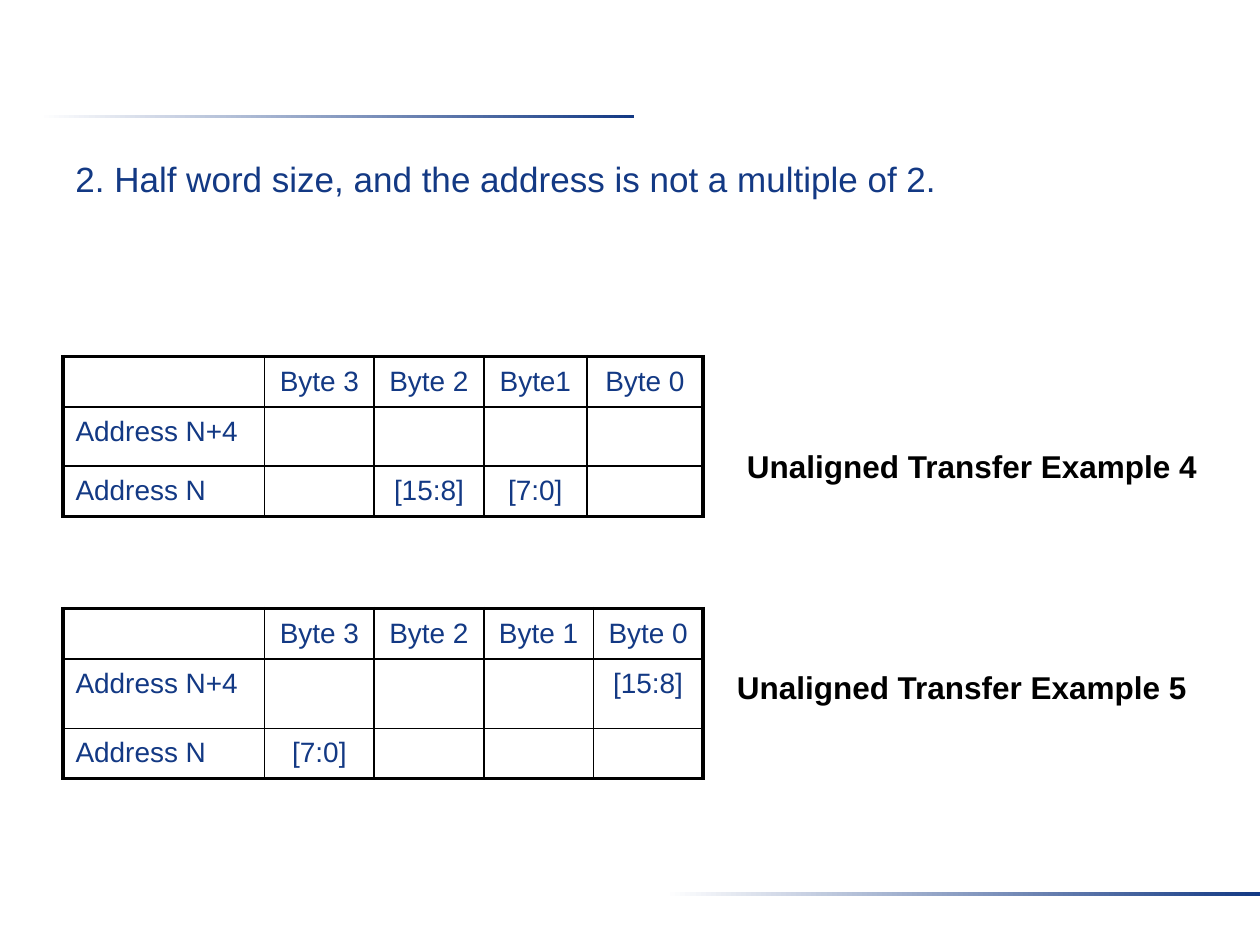
from lxml import etree
from pptx import Presentation
from pptx.dml.color import RGBColor
from pptx.enum.shapes import MSO_SHAPE
from pptx.enum.text import MSO_AUTO_SIZE, PP_ALIGN
from pptx.oxml.ns import qn
from pptx.util import Inches, Pt

RECT = MSO_SHAPE.RECTANGLE
LEFT, CENTER = PP_ALIGN.LEFT, PP_ALIGN.CENTER
FIT = MSO_AUTO_SIZE.SHAPE_TO_FIT_TEXT
NAVY, BLACK, WHITE = "133984", "000000", "FFFFFF"
THIN, THICK = 1, 2.25
WIDE, HIGH = 10, 7.5
EDGE = 0.05 * WIDE
ROW = 0.39

TITLE = "2. Half word size, and the address is not a multiple of 2."
BARS = [(0.31, 0.91), (5.28, 7.08)]
LABELS = [
    ("Unaligned Transfer Example 4", 5.83, 3.5),
    ("Unaligned Transfer Example 5", 5.75, 5.25),
]
TABLES = [
    {
        "top": 2.83,
        "cols": [1.6, 0.87, 0.87, 0.82, 0.92],
        "rows": [ROW, 0.47, ROW],
        "cells": [
            ["", "Byte 3", "Byte 2", "Byte1", "Byte 0"],
            ["Address N+4", "", "", "", ""],
            ["Address N", "", "[15:8]", "[7:0]", ""],
        ],
    },
    {
        "top": 4.83,
        "cols": [1.6] + [0.87] * 4,
        "rows": [ROW, 0.55, ROW],
        "cells": [
            ["", "Byte 3", "Byte 2", "Byte 1", "Byte 0"],
            ["Address N+4", "", "", "", "[15:8]"],
            ["Address N", "[7:0]", "", "", ""],
        ],
    },
]


def paint(color):
    """Turn a hex string into a colour."""
    return RGBColor.from_string(color)


def write(frame, text, size=16, color=NAVY, bold=False, align=LEFT, space=1.1):
    """Put one formatted paragraph in a text frame."""
    para = frame.paragraphs[0]
    para.alignment, para.line_spacing = align, space
    run = para.add_run()
    run.text = text
    font = run.font
    font.name, font.size, font.bold = "Arial", Pt(size), bold
    font.color.rgb = paint(color)


def draw_bar(slide, left, top):
    """Draw a rule that fades in from the left."""
    bar = slide.shapes.add_shape(
        RECT, Inches(left), Inches(top), Inches(4.72), Inches(0.03))
    bar.shadow.inherit = False
    bar.line.fill.background()
    bar.fill.gradient()
    bar.fill.gradient_angle = 0
    for stop, color in zip(bar.fill.gradient_stops, (WHITE, NAVY)):
        stop.color.rgb = paint(color)


def add_box(slide, left, top, width, height):
    """Add a text box and return its frame."""
    box = slide.shapes.add_textbox(
        Inches(left), Inches(top), Inches(width), Inches(height))
    return box.text_frame


def set_edges(cell, outer):
    """Line each side of a cell, thick where it is on the outside."""
    props = cell._tc.get_or_add_tcPr()
    for spot, (side, far) in enumerate(zip("LRTB", outer)):
        line = etree.Element(
            qn("a:ln" + side), w=str(Pt(THICK if far else THIN)))
        fill = etree.SubElement(line, qn("a:solidFill"))
        etree.SubElement(fill, qn("a:srgbClr"), val=BLACK)
        props.insert(spot, line)


def draw_table(slide, top, cols, rows, cells):
    """Draw a byte map with a thick frame and thin inner lines."""
    grid = slide.shapes.add_table(
        len(rows), len(cols), Inches(EDGE), Inches(top),
        Inches(sum(cols)), Inches(sum(rows))).table
    grid.first_row = grid.horz_banding = False
    for col, width in zip(grid.columns, cols):
        col.width = Inches(width)
    for row, height in zip(grid.rows, rows):
        row.height = Inches(height)
    for r, line in enumerate(cells):
        for c, text in enumerate(line):
            cell = grid.cell(r, c)
            cell.fill.background()
            set_edges(cell, (c == 0, c == len(cols) - 1,
                             r == 0, r == len(rows) - 1))
            if text:
                write(cell.text_frame, text, align=CENTER if c else LEFT)


def main():
    """Build the slide and save it."""
    deck = Presentation()
    deck.slide_width, deck.slide_height = Inches(WIDE), Inches(HIGH)
    slide = deck.slides.add_slide(deck.slide_layouts[6])
    for left, top in BARS:
        draw_bar(slide, left, top)
    head = add_box(slide, EDGE, 1.17, WIDE - 2 * EDGE, 0.5)
    head.word_wrap = True
    write(head, TITLE, size=20)
    for text, left, top in LABELS:
        frame = add_box(slide, left, top, 3.78, 0.4)
        frame.word_wrap, frame.auto_size = False, FIT
        write(frame, text, size=18, color=BLACK, bold=True, space=1.0)
    for table in TABLES:
        draw_table(slide, **table)
    deck.save("out.pptx")


if __name__ == "__main__":
    main()
